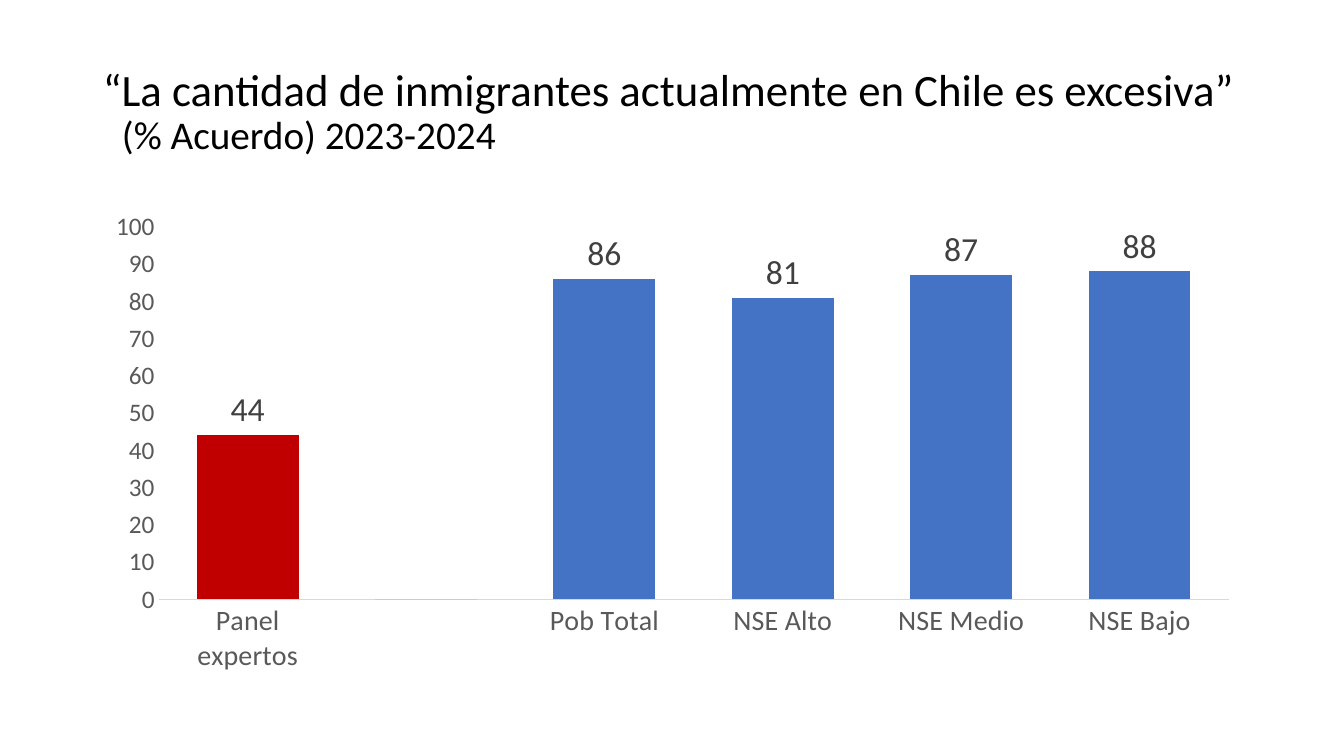
from pptx import Presentation
from pptx.chart.data import CategoryChartData
from pptx.dml.color import RGBColor
from pptx.enum.chart import XL_CHART_TYPE, XL_LABEL_POSITION, XL_TICK_MARK
from pptx.enum.text import MSO_ANCHOR
from pptx.util import Emu, Pt

COLUMNS = XL_CHART_TYPE.COLUMN_CLUSTERED
LABEL_ABOVE = XL_LABEL_POSITION.OUTSIDE_END
NO_TICK = XL_TICK_MARK.NONE
MIDDLE = MSO_ANCHOR.MIDDLE

FONT = "Calibri"
BLACK, DARK_GREY, GREY, LIGHT_GREY = "000000", "404040", "595959", "D9D9D9"
BLUE, RED = "4472C4", "C00000"

AGREEMENT = {
    "Panel expertos": 44,
    " ": 0,
    "Pob Total": 86,
    "NSE Alto": 81,
    "NSE Medio": 87,
    "NSE Bajo": 88,
}


def px(length):
    return Emu(round(length * 914400 / 100.8))


def rgb(hex_color):
    return RGBColor.from_string(hex_color)


def style_font(font, size, color):
    font.name = FONT
    font.size = Pt(size)
    font.color.rgb = rgb(color)


def paint(fill, color):
    fill.solid()
    fill.fore_color.rgb = rgb(color)


def add_title(slide, statement, measure):
    """Statement with a smaller measure that wraps to an indented second line."""
    title = slide.shapes.add_textbox(px(93), px(40), px(1159), px(146))
    frame = title.text_frame
    frame.word_wrap = True
    frame.vertical_anchor = MIDDLE
    heading = frame.paragraphs[0]
    heading.line_spacing = 0.9
    hanging = px(19)
    properties = heading._p.get_or_add_pPr()
    properties.set("marL", str(hanging))
    properties.set("indent", str(-hanging))
    for words, size in ((statement + " ", 32), (measure, 28)):
        run = heading.add_run()
        run.text = words
        style_font(run.font, size, BLACK)


def style_axis(axis, size):
    axis.has_major_gridlines = False
    axis.major_tick_mark = NO_TICK
    axis.minor_tick_mark = NO_TICK
    style_font(axis.tick_labels.font, size, GREY)


def add_agreement_chart(slide):
    data = CategoryChartData()
    data.categories = list(AGREEMENT)
    data.add_series("Acuerdo", list(AGREEMENT.values()))
    chart = slide.shapes.add_chart(
        COLUMNS, px(93), px(202), px(1159), px(480), data
    ).chart
    chart.has_legend = False
    chart.has_title = False
    style_font(chart.font, 10, BLACK)

    groups = chart.category_axis
    style_axis(groups, 20)
    groups.format.line.color.rgb = rgb(LIGHT_GREY)
    groups.format.line.width = Pt(0.75)

    percent = chart.value_axis
    style_axis(percent, 18)
    percent.format.line.fill.background()
    percent.minimum_scale, percent.maximum_scale = 0, 100
    percent.major_unit = 10

    plot = chart.plots[0]
    plot.gap_width = 75
    plot.vary_by_categories = False
    agreement = plot.series[0]
    paint(agreement.format.fill, BLUE)
    paint(agreement.points[0].format.fill, RED)

    labels = agreement.data_labels
    labels.show_value = True
    labels.position = LABEL_ABOVE
    # The empty sections keep the zero of the spacer column unlabelled.
    labels.number_format = "0;;"
    labels.number_format_is_linked = False
    style_font(labels.font, 24, DARK_GREY)


def main():
    deck = Presentation()
    deck.slide_width, deck.slide_height = px(1344), px(756)
    slide = deck.slides.add_slide(deck.slide_layouts[6])
    add_title(
        slide,
        "“La cantidad de inmigrantes actualmente en Chile es excesiva”",
        "(% Acuerdo) 2023-2024",
    )
    add_agreement_chart(slide)
    deck.save("out.pptx")


if __name__ == "__main__":
    main()
